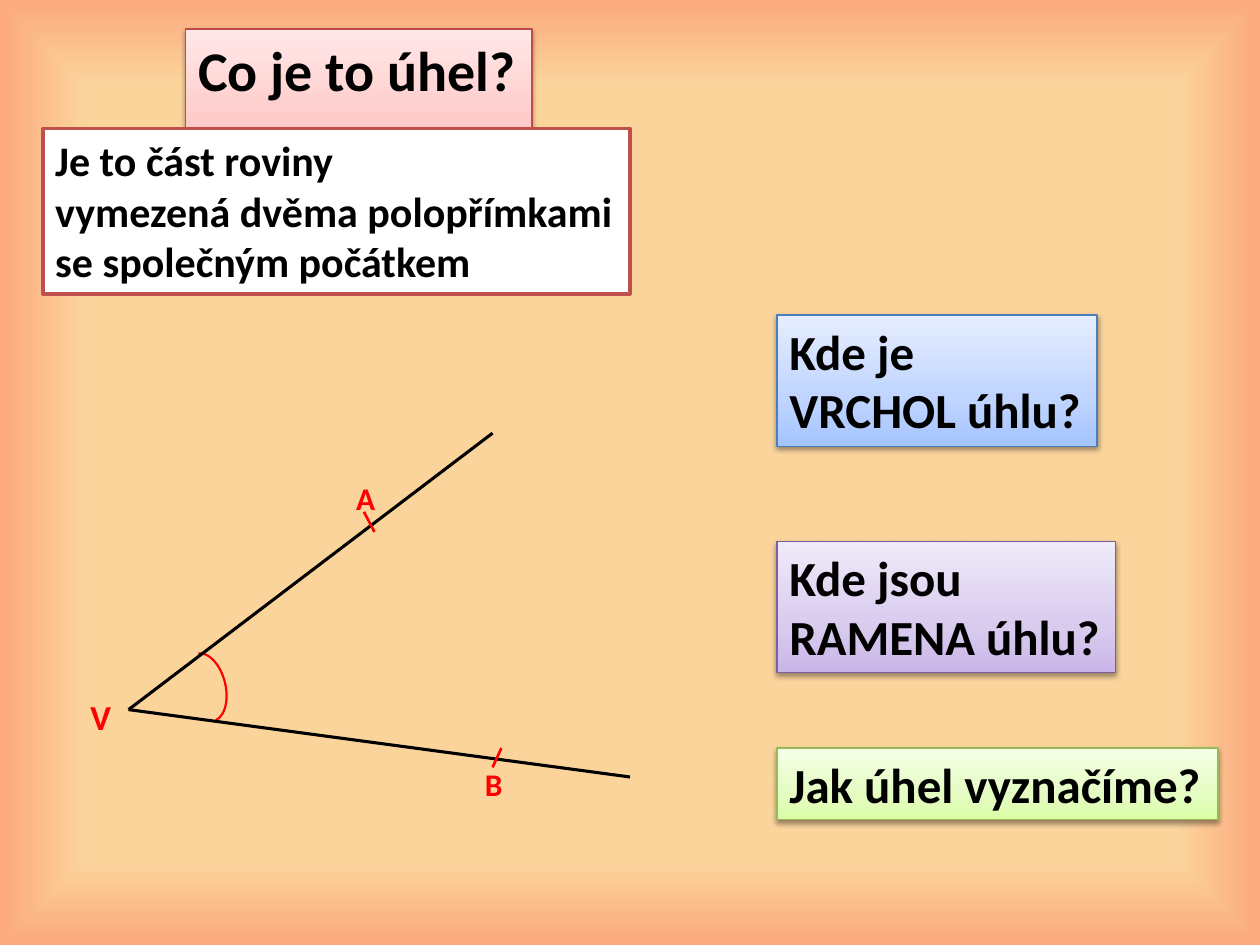
from lxml.etree import SubElement
from pptx import Presentation
from pptx.dml.color import RGBColor
from pptx.enum.shapes import MSO_CONNECTOR as Connector, MSO_SHAPE as Preset
from pptx.enum.text import MSO_ANCHOR as Anchor, MSO_AUTO_SIZE as AutoSize, PP_ALIGN as Align
from pptx.oxml.ns import qn
from pptx.util import Pt

BLACK, RED = "000000", "FF0000"


def color(code):
    """Turn a hex string into a colour."""
    return RGBColor.from_string(code)


def add_node(parent, tag, **attributes):
    """Append a drawing element and return it."""
    node = SubElement(parent, qn(tag))
    for key, value in attributes.items():
        node.set(key, str(value))
    return node


def set_gradient(fill, owner, stops):
    """Give a fill several stops and return its emptied gradient element."""
    fill.gradient()
    gradient = owner.find(".//" + qn("a:gradFill"))
    gradient.clear()
    stop_list = add_node(gradient, "a:gsLst")
    for percent, code in stops:
        stop = add_node(stop_list, "a:gs", pos=percent * 1000)
        add_node(stop, "a:srgbClr", val=code)
    return gradient


def paint_background(slide):
    """Paint the slide with a rectangular gradient that darkens at the edges."""
    stops = [(0, "FBD49C"), (82, "FBD49C"), (100, "FBA97D")]
    gradient = set_gradient(slide.background.fill, slide.element, stops)
    center = add_node(gradient, "a:path", path="rect")
    add_node(center, "a:fillToRect", l=50000, t=50000, r=50000, b=50000)


def place(box, left, top, width, height):
    """Move and size a box in points."""
    box.left, box.top, box.width, box.height = Pt(left), Pt(top), Pt(width), Pt(height)


def write(box, lines, size, code=BLACK):
    """Write bold left-aligned lines into a box that fits its text."""
    frame = box.text_frame
    frame.text = "\n".join(lines)
    frame.word_wrap = False
    frame.auto_size = AutoSize.SHAPE_TO_FIT_TEXT
    frame.vertical_anchor = Anchor.TOP
    for paragraph in frame.paragraphs:
        paragraph.alignment = Align.LEFT
        font = paragraph.font
        font.name, font.size, font.bold = "Calibri", Pt(size), True
        font.color.rgb = color(code)


def outline(item, code, width):
    """Set the colour and width of a line."""
    item.line.color.rgb = color(code)
    item.line.width = Pt(width)


def add_text(slide, bounds, lines, size, code=BLACK):
    """Add a text box and return it."""
    box = slide.shapes.add_textbox(0, 0, 0, 0)
    place(box, *bounds)
    write(box, lines, size, code)
    return box


def style_card(card, shades, edge):
    """Give a card an upward gradient, a thin edge and a soft shadow."""
    gradient = set_gradient(card.fill, card.element, zip((0, 35, 100), shades))
    add_node(gradient, "a:lin", ang=270 * 60000, scaled=1)
    outline(card, edge, 0.75)
    card.shadow.inherit = False
    effects = card.element.spPr.find(qn("a:effectLst"))
    shadow = add_node(effects, "a:outerShdw", blurRad=Pt(3.1), dist=Pt(1.6),
                      dir=90 * 60000, rotWithShape=0)
    tone = add_node(shadow, "a:srgbClr", val=BLACK)
    add_node(tone, "a:alpha", val=38000)


def add_line(slide, start, end, code, width):
    """Draw a straight line between two points."""
    line = slide.shapes.add_connector(Connector.STRAIGHT, *map(Pt, start + end))
    outline(line, code, width)
    add_node(line.element.spPr, "a:effectLst")


def add_angle_arc(slide):
    """Mark the angle at the vertex with an arc."""
    arc = slide.shapes.add_shape(Preset.ARC, Pt(105.84), Pt(372.96), Pt(23.04), Pt(39.6))
    arc.adjustments[0], arc.adjustments[1] = 163.14, 51.545
    arc.rotation = 346.3
    arc.fill.background()
    arc.shadow.inherit = False
    outline(arc, RED, 1.25)


def add_angle(slide):
    """Draw the angle AVB with its arms, point marks and labels."""
    vertex = (73.5, 405.5)
    for arm_end in [(281.5, 247.5), (360, 444)]:
        add_line(slide, arm_end, vertex, BLACK, 1.75)
    for start, end in [((208, 292.5), (214, 304)), ((286.5, 427.5), (281.5, 438.5))]:
        add_line(slide, start, end, RED, 1.5)
    labels = [("V", (44.5, 394, 26.5, 31.5), 20),
              ("A", (196.5, 270, 25, 29), 18),
              ("B", (270, 433.5, 24.5, 29), 18)]
    for letter, bounds, size in labels:
        add_text(slide, bounds, [letter], size, RED)


def main():
    """Build the slide and save it."""
    deck = Presentation()
    deck.slide_width, deck.slide_height = Pt(720), Pt(540)
    slide = deck.slides.add_slide(deck.slide_layouts[5])
    paint_background(slide)

    title = slide.shapes.title
    place(title, 95.5 + 10.5, 16.5, 198, 46)
    write(title, ["Co je to úhel?"], 32)
    style_card(title, ("FFA6A5", "FFC0BF", "FFE7E7"), "BF4C48")

    definition = add_text(slide, (24.5, 73.5, 335.5, 94.5),
                          ["Je to část roviny", "vymezená dvěma polopřímkami",
                           "se společným počátkem"], 24)
    definition.fill.solid()
    definition.fill.fore_color.rgb = color("FFFFFF")
    outline(definition, "C0504D", 2)

    add_angle_arc(slide)
    add_angle(slide)

    questions = [
        (["Kde je", "VRCHOL úhlu?"], (180, 183, 75),
         ("A4C4FF", "BFD4FF", "E6EEFF"), "4B7EBC"),
        (["Kde jsou", "RAMENA úhlu?"], (309.5, 193.5, 75),
         ("C9B5E8", "D8CBEE", "F0EAF9"), "7D60A0"),
        (["Jak úhel vyznačíme?"], (427.5, 252, 41),
         ("DAFDA7", "E4FCC2", "F5FFE7"), "98B955"),
    ]
    for lines, bounds, shades, edge in questions:
        question = add_text(slide, (444, *bounds), lines, 28)
        style_card(question, shades, edge)

    deck.save("out.pptx")


if __name__ == "__main__":
    main()
